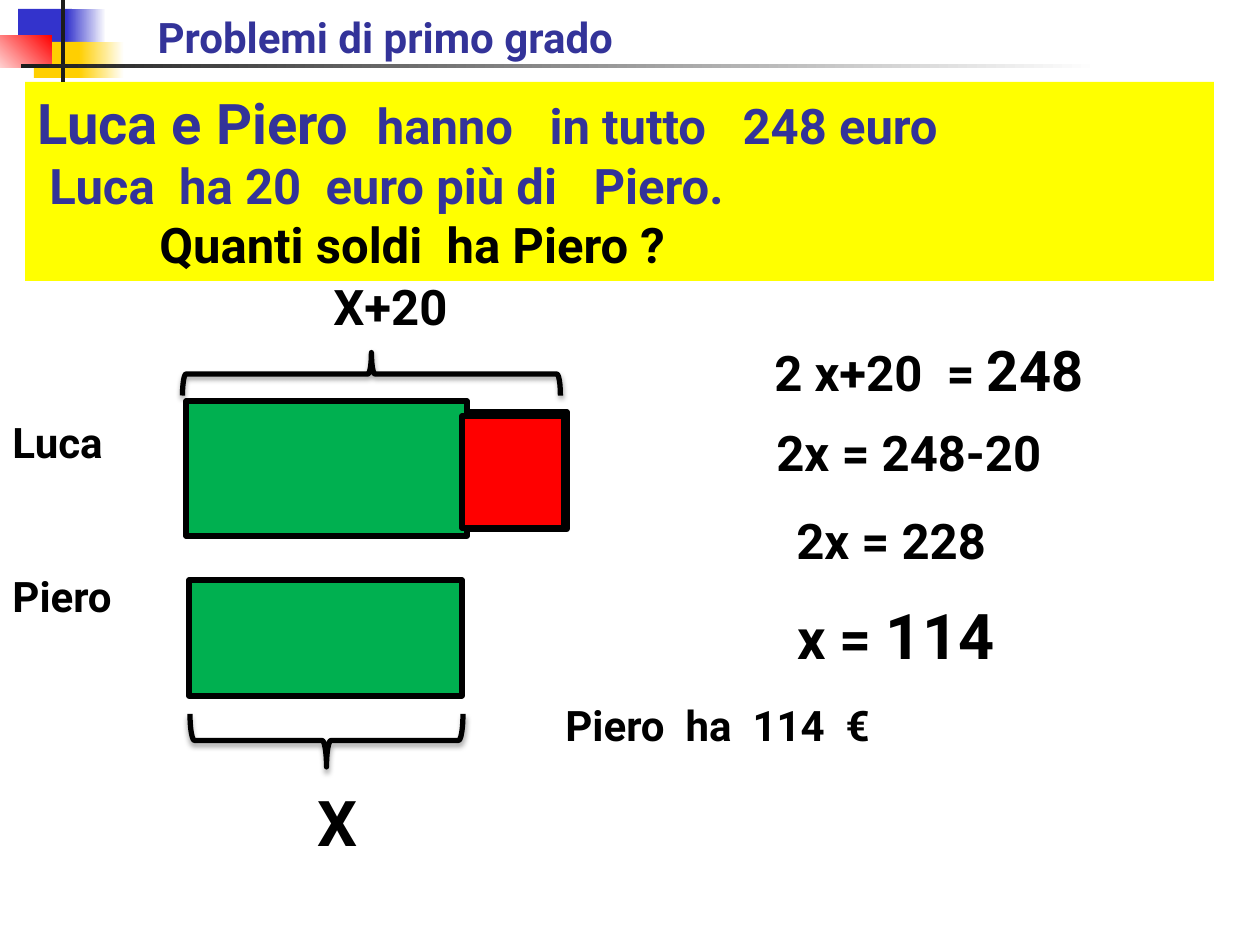
from lxml import etree
from pptx import Presentation
from pptx.dml.color import RGBColor
from pptx.enum.shapes import MSO_SHAPE
from pptx.enum.text import MSO_ANCHOR, MSO_AUTO_SIZE, PP_ALIGN
from pptx.oxml import parse_xml
from pptx.util import Pt

RECT, BRACE = MSO_SHAPE.RECTANGLE, MSO_SHAPE.RIGHT_BRACE
LEFT, TOP, NO_FIT = PP_ALIGN.LEFT, MSO_ANCHOR.TOP, MSO_AUTO_SIZE.NONE
PX = 914400 / 126
FONT = "Roboto"
BLACK, WHITE, NAVY, BLUE = "000000", "FFFFFF", "333399", "3333CC"
GREEN, RED, YELLOW, GOLD, DARK = "00B050", "FF0000", "FFFF00", "FFCF01", "1C1C1C"
SHADOW = (
    '<a:effectLst xmlns:a="http://schemas.openxmlformats.org/drawingml/2006/main">'
    '<a:outerShdw blurRad="39370" dist="22860" dir="5400000" rotWithShape="0">'
    '<a:srgbClr val="000000"><a:alpha val="35000"/></a:srgbClr>'
    '</a:outerShdw></a:effectLst>'
)


def color(value):
    return RGBColor.from_string(value)


def write(box, lines):
    frame = box.text_frame
    frame.word_wrap = True
    frame.auto_size = NO_FIT
    frame.vertical_anchor = TOP
    for index, (spans, ink, indent) in enumerate(lines):
        para = frame.paragraphs[0] if index == 0 else frame.add_paragraph()
        para.alignment = LEFT
        para.font.name = FONT
        para.font.bold = True
        para.font.color.rgb = color(ink)
        if indent:
            para._p.get_or_add_pPr().set("marL", str(round(indent * PX)))
        for text, size in spans:
            span = para.add_run()
            span.text = text
            span.font.size = Pt(size)


deck = Presentation()
deck.slide_width = round(1260 * PX)
deck.slide_height = round(945 * PX)
page = deck.slides.add_slide(deck.slide_layouts[5])

title = page.shapes.title
title.left, title.top, title.width, title.height = [round(n * PX) for n in (145, 5, 878, 115)]
write(title, [([("Problemi di primo grado", 24)], NAVY, 0)])

bars = [
    (189, 580, 273, 116, GREEN),
    (189, 412, 378, 117, GREEN),
    (186, 401, 281, 135, GREEN),
    (462, 416, 102, 112, RED),
]
for *place, fill in bars:
    bar = page.shapes.add_shape(RECT, *[round(n * PX) for n in place])
    bar.shadow.inherit = False
    bar.fill.solid()
    bar.fill.fore_color.rgb = color(fill)
    bar.line.color.rgb = color(BLACK)
    bar.line.width = Pt(3)

for *place, turn in [(350, 185, 43, 378, 270), (300, 604, 53, 273, 90)]:
    brace = page.shapes.add_shape(BRACE, *[round(n * PX) for n in place])
    brace.rotation = turn
    brace.fill.background()
    brace.line.color.rgb = color(BLACK)
    brace.line.width = Pt(3)
    brace._element.spPr.append(parse_xml(SHADOW))

labels = [
    (0, 410, 190, 63, [("Luca", 24)]),
    (0, 564, 209, 63, [("Piero", 24)]),
    (321, 270, 263, 72, [("X+20", 28)]),
    (305, 777, 165, 89, [("X", 36)]),
    (762, 329, 456, 81, [("2 x+20  = ", 28), ("248", 32)]),
    (764, 416, 496, 72, [("2x = 248-20", 28)]),
    (784, 504, 476, 72, [("2x = 228", 28)]),
    (785, 590, 475, 140, [("x = ", 32), ("114", 36)]),
    (553, 693, 707, 115, [("Piero  ha  114  €", 24)]),
]
for *place, spans in labels:
    label = page.shapes.add_textbox(*[round(n * PX) for n in place])
    write(label, [(spans, BLACK, 0)])

problem = page.shapes.add_shape(RECT, *[round(n * PX) for n in (25, 82, 1189, 199)])
problem.shadow.inherit = False
problem.fill.solid()
problem.fill.fore_color.rgb = color(YELLOW)
problem.line.fill.background()
write(problem, [
    ([("Luca e Piero  ", 32), ("hanno   in tutto   248 euro", 28)], NAVY, 0),
    ([("Luca  ha 20  euro più di   Piero.", 28)], NAVY, 12),
    ([("Quanti soldi  ha Piero ?", 28)], BLACK, 122),
])

ornaments = [
    (18, 9, 54, 36, BLUE, BLUE, 0),
    (66, 9, 40, 36, BLUE, WHITE, 0),
    (34, 42, 53, 36, GOLD, GOLD, 0),
    (79, 42, 45, 36, GOLD, WHITE, 0),
    (-18, 35, 70, 33, WHITE, RED, 45),
    (61, 0, 4, 82, DARK, DARK, 0),
    (21, 64, 1079, 4, DARK, WHITE, 0),
]
for *place, start, end, angle in ornaments:
    ornament = page.shapes.add_shape(RECT, *[round(n * PX) for n in place])
    ornament.shadow.inherit = False
    ornament.line.fill.background()
    if start == end:
        ornament.fill.solid()
        ornament.fill.fore_color.rgb = color(start)
    else:
        ornament.fill.gradient()
        ornament.fill.gradient_angle = angle
        for stop, shade in zip(ornament.fill.gradient_stops, (start, end)):
            stop.color.rgb = color(shade)

deck.save("out.pptx")
